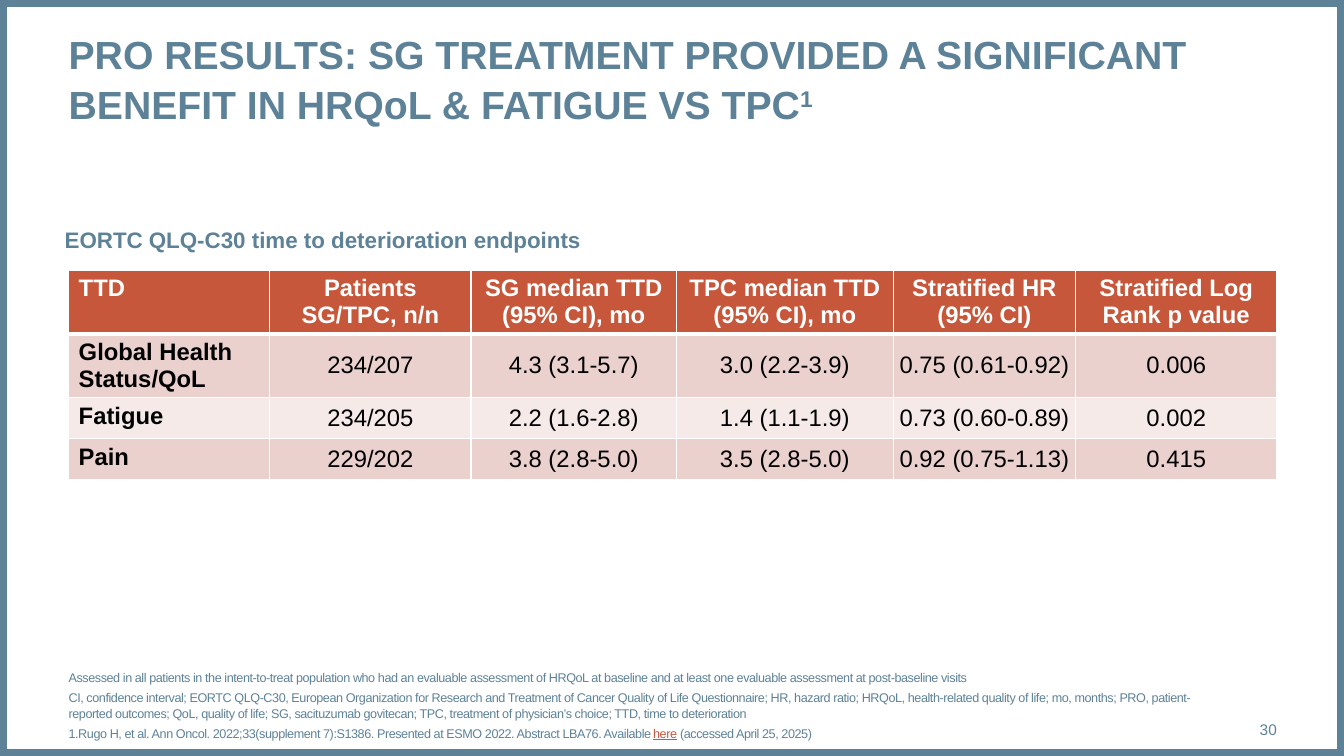
from lxml.etree import SubElement
from pptx import Presentation
from pptx.dml.color import RGBColor
from pptx.enum.shapes import MSO_SHAPE as Shape
from pptx.enum.text import MSO_ANCHOR as Anchor, MSO_AUTO_SIZE as AutoSize, PP_ALIGN as Align
from pptx.oxml.ns import qn
from pptx.util import Cm, Pt

BLUE = RGBColor(0x5D, 0x82, 0x98)
RUST = RGBColor(0xC6, 0x57, 0x3B)
DARK_BAND = RGBColor(0xEA, 0xD1, 0xCE)
LIGHT_BAND = RGBColor(0xF5, 0xEA, 0xE8)
WHITE = RGBColor(0xFF, 0xFF, 0xFF)
BLACK = RGBColor(0x00, 0x00, 0x00)

SLIDE_WIDTH, SLIDE_HEIGHT = Cm(33.87), Cm(19.05)
LEFT, CONTENT_WIDTH = Cm(1.73), Cm(30.45)

COLUMN_WIDTHS = [5.07, 5.07, 5.18, 5.46, 4.6, 5.07]
ROW_HEIGHTS = [1.58, 1.6, 1.04, 1.04]
ROWS = [
    ["TTD", "Patients\vSG/TPC, n/n", "SG median TTD (95% CI), mo",
     "TPC median TTD (95% CI), mo", "Stratified HR\v(95% CI)",
     "Stratified Log Rank p value"],
    ["Global Health Status/QoL", "234/207", "4.3 (3.1-5.7)", "3.0 (2.2-3.9)",
     "0.75 (0.61-0.92)", "0.006"],
    ["Fatigue", "234/205", "2.2 (1.6-2.8)", "1.4 (1.1-1.9)",
     "0.73 (0.60-0.89)", "0.002"],
    ["Pain", "229/202", "3.8 (2.8-5.0)", "3.5 (2.8-5.0)",
     "0.92 (0.75-1.13)", "0.415"],
]
FOOTNOTES = [
    ["Assessed in all patients in the intent-to-treat population who had an evaluable "
     "assessment of HRQoL at baseline and at least one evaluable assessment at "
     "post‑baseline visits"],
    ["CI, confidence interval; EORTC QLQ-C30, European Organization for Research and "
     "Treatment of Cancer Quality of Life Questionnaire; HR, hazard ratio; HRQoL, "
     "health-related quality of life; mo, months; PRO, patient-reported outcomes; "
     "QoL, quality of life; SG, sacituzumab govitecan; TPC, treatment of physician’s "
     "choice; TTD, time to deterioration"],
    ["1.Rugo H, et al. Ann Oncol. 2022;33(supplement 7):S1386. Presented at ESMO 2022. "
     "Abstract LBA76. Available ", "here", " (accessed April 25, 2025)"],
]


def format_font(font, size, color, bold=False):
    font.name, font.size, font.bold = "Arial", Pt(size), bold
    font.color.rgb = color


def prepare_frame(shape, anchor=Anchor.TOP, wrap=True):
    """Remove the insets of a shape's text frame and return the frame."""
    frame = shape.text_frame
    frame.margin_left = frame.margin_right = frame.margin_top = frame.margin_bottom = 0
    frame.auto_size = AutoSize.NONE
    frame.vertical_anchor, frame.word_wrap = anchor, wrap
    return frame


def add_border(slide):
    border = slide.shapes.add_shape(Shape.RECTANGLE, 0, 0, SLIDE_WIDTH, SLIDE_HEIGHT)
    border.shadow.inherit = False
    border.fill.background()
    border.line.color.rgb, border.line.width = BLUE, Pt(10)


def add_title(slide, left, top, width, height):
    title = slide.shapes.title
    title.left, title.top, title.width, title.height = left, top, width, height
    paragraph = prepare_frame(title).paragraphs[0]
    paragraph.alignment, paragraph.line_spacing = Align.LEFT, 1.05
    format_font(paragraph.font, 28, BLUE, bold=True)
    paragraph.add_run().text = ("PRO RESULTS: SG TREATMENT PROVIDED A SIGNIFICANT "
                                "BENEFIT IN HRQoL & FATIGUE VS TPC")
    reference = paragraph.add_run()
    reference.text = "1"
    reference._r.get_or_add_rPr().set("baseline", "30000")


def add_line_of_text(slide, box, text, size, bold=False, align=Align.LEFT,
                     anchor=Anchor.TOP, wrap=True):
    frame = prepare_frame(slide.shapes.add_textbox(*box), anchor, wrap)
    paragraph = frame.paragraphs[0]
    paragraph.text, paragraph.alignment = text, align
    format_font(paragraph.font, size, BLUE, bold)


def set_cell_borders(cell, top, bottom):
    """Draw white cell borders; top and bottom are widths in points."""
    properties = cell._tc.get_or_add_tcPr()
    for side, width in (("L", 1), ("R", 1), ("T", top), ("B", bottom)):
        line = SubElement(properties, qn(f"a:ln{side}"), w=str(Pt(width)))
        fill = SubElement(line, qn("a:solidFill"))
        SubElement(fill, qn("a:srgbClr"), val=str(WHITE))


def format_cell(cell, row, column):
    is_header, is_label = row == 0, column == 0
    set_cell_borders(cell, top=3 if row == 1 else 1, bottom=3 if is_header else 1)
    cell.fill.solid()
    cell.fill.fore_color.rgb = RUST if is_header else DARK_BAND if row % 2 else LIGHT_BAND
    if not is_label:
        cell.margin_left = cell.margin_right = 0
    cell.vertical_anchor = Anchor.TOP if is_header or is_label else Anchor.MIDDLE
    paragraph = cell.text_frame.paragraphs[0]
    paragraph.alignment = Align.LEFT if is_label else Align.CENTER
    format_font(paragraph.font, 17, WHITE if is_header else BLACK, is_header or is_label)


def add_endpoint_table(slide, left, top, width, height):
    table = slide.shapes.add_table(len(ROWS), len(COLUMN_WIDTHS),
                                   left, top, width, height).table
    for column, column_width in zip(table.columns, COLUMN_WIDTHS):
        column.width = Cm(column_width)
    for row, (values, row_height) in enumerate(zip(ROWS, ROW_HEIGHTS)):
        table.rows[row].height = Cm(row_height)
        for column, value in enumerate(values):
            cell = table.cell(row, column)
            cell.text = value
            format_cell(cell, row, column)


def add_footnotes(slide, left, top, width, height):
    frame = prepare_frame(slide.shapes.add_textbox(left, top, width, height), Anchor.BOTTOM)
    for index, parts in enumerate(FOOTNOTES):
        paragraph = frame.add_paragraph() if index else frame.paragraphs[0]
        paragraph.space_before = Pt(3 if index else 0)
        paragraph.line_spacing = 1.05
        format_font(paragraph.font, 9, BLUE)
        for part in parts:
            run = paragraph.add_run()
            run.text = part
            run._r.get_or_add_rPr().set("spc", "-30")
            if part == "here":
                run.font.underline = True
                run.font.color.rgb = RUST


def build_results_slide(presentation):
    slide = presentation.slides.add_slide(presentation.slide_layouts[5])
    add_border(slide)
    add_title(slide, LEFT, Cm(0.71), CONTENT_WIDTH, Cm(2.39))
    add_line_of_text(slide, (Cm(1.63), Cm(5.69), Cm(13.18), Cm(0.69)),
                     "EORTC QLQ-C30 time to deterioration endpoints", 16, bold=True, wrap=False)
    add_endpoint_table(slide, LEFT, Cm(6.81), CONTENT_WIDTH, Cm(sum(ROW_HEIGHTS)))
    add_footnotes(slide, LEFT, Cm(17.65), Cm(28.27), Cm(1.02))
    add_line_of_text(slide, (Cm(30), Cm(17.86), Cm(2.18), Cm(1.02)), "30", 11,
                     align=Align.RIGHT, anchor=Anchor.MIDDLE)


def main():
    presentation = Presentation()
    presentation.slide_width, presentation.slide_height = SLIDE_WIDTH, SLIDE_HEIGHT
    build_results_slide(presentation)
    presentation.save("out.pptx")


if __name__ == "__main__":
    main()
